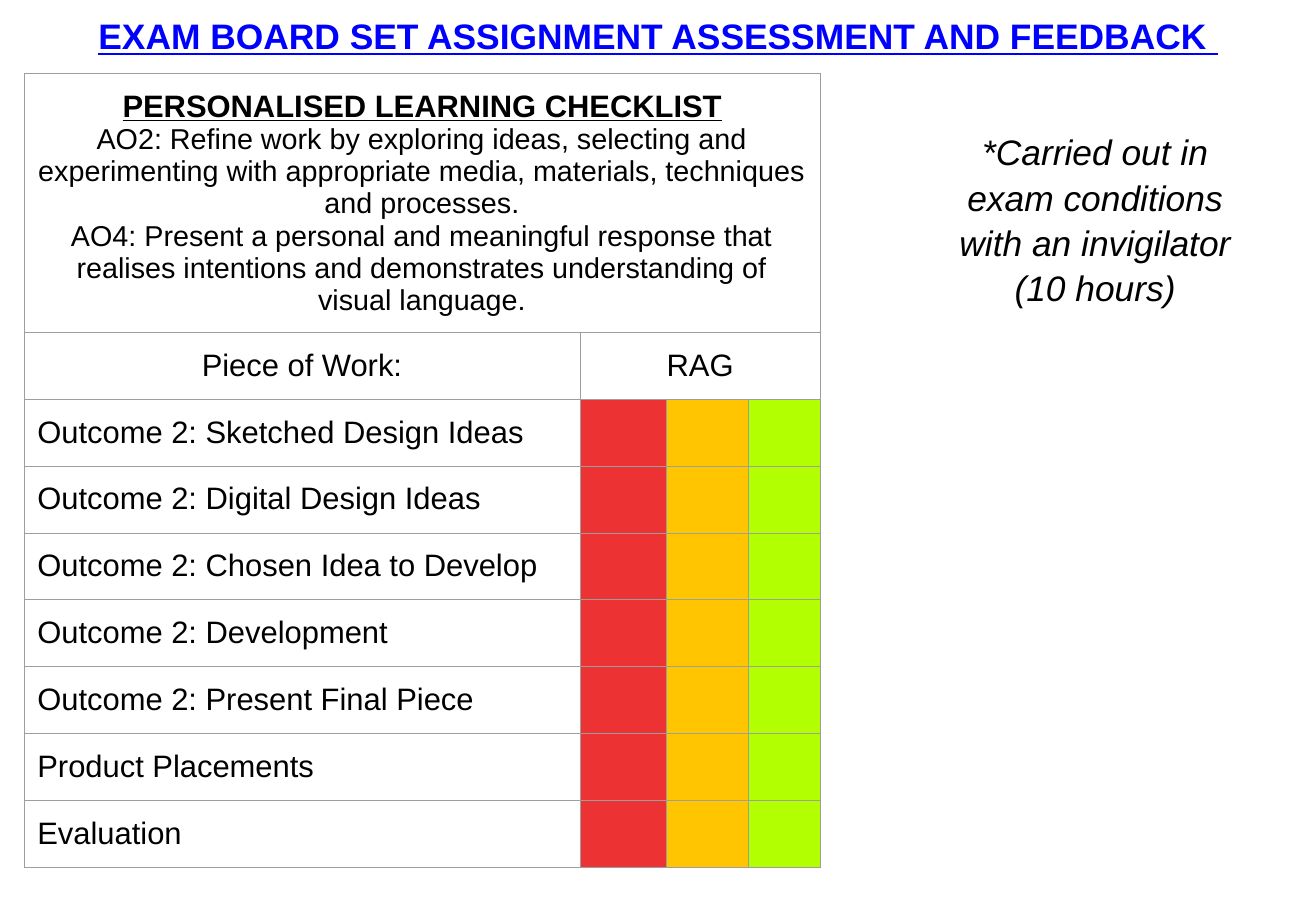
from lxml import etree
from pptx import Presentation
from pptx.dml.color import RGBColor
from pptx.enum.text import MSO_ANCHOR, MSO_AUTO_SIZE, PP_ALIGN
from pptx.oxml.ns import qn
from pptx.util import Inches, Pt

CENTER, LEFT = PP_ALIGN.CENTER, PP_ALIGN.LEFT
TOP, MIDDLE = MSO_ANCHOR.TOP, MSO_ANCHOR.MIDDLE
NO_AUTOFIT = MSO_AUTO_SIZE.NONE
TITLE_ONLY = 5

COLORS = {
    "title": "0000FF",
    "text": "000000",
    "border": "9E9E9E",
    "red": "EC3232",
    "amber": "FFC500",
    "green": "B1FF00",
}
RATINGS = ["red", "amber", "green"]
OBJECTIVES = [
    "PERSONALISED LEARNING CHECKLIST",
    "AO2: Refine work by exploring ideas, selecting and experimenting with "
    "appropriate media, materials, techniques and processes.",
    "AO4: Present a personal and meaningful response that realises intentions "
    "and demonstrates understanding of visual language.",
]
PIECES_OF_WORK = [
    "Outcome 2: Sketched Design Ideas",
    "Outcome 2: Digital Design Ideas",
    "Outcome 2: Chosen Idea to Develop",
    "Outcome 2: Development",
    "Outcome 2: Present Final Piece",
    "Product Placements",
    "Evaluation",
]
COLUMN_WIDTHS = [6.99, 1.08, 1.03, 0.91]
ROW_HEIGHTS = [3.25] + [0.84] * (1 + len(PIECES_OF_WORK))


def format_paragraph(paragraph, size, align=CENTER, color="text",
                     bold=False, underline=False, italic=False):
    paragraph.alignment = align
    for run in paragraph.runs:
        font = run.font
        font.name, font.size = "Arial", Pt(size)
        font.bold, font.underline, font.italic = bold, underline, italic
        font.color.rgb = RGBColor.from_string(COLORS[color])


def add_borders(cell):
    properties = cell._tc.get_or_add_tcPr()
    for index, side in enumerate(["a:lnL", "a:lnR", "a:lnT", "a:lnB"]):
        line = etree.Element(qn(side), w=str(Pt(0.75)))
        fill = etree.SubElement(line, qn("a:solidFill"))
        etree.SubElement(fill, qn("a:srgbClr"), val=COLORS["border"])
        properties.insert(index, line)


presentation = Presentation()
presentation.slide_width = Inches(16.54)
presentation.slide_height = Inches(11.42)
slide = presentation.slides.add_slide(presentation.slide_layouts[TITLE_ONLY])

# Checklist table
table = slide.shapes.add_table(
    len(ROW_HEIGHTS), len(COLUMN_WIDTHS), Inches(0.3), Inches(0.92),
    Inches(sum(COLUMN_WIDTHS)), Inches(sum(ROW_HEIGHTS))).table
table.first_row = table.horz_banding = False
for column, width in zip(table.columns, COLUMN_WIDTHS):
    column.width = Inches(width)
for row, height in zip(table.rows, ROW_HEIGHTS):
    row.height = Inches(height)
for cell in table.iter_cells():
    cell.margin_left = cell.margin_right = Inches(0.17)
    cell.margin_top = cell.margin_bottom = Inches(0.2)
    cell.fill.background()
    add_borders(cell)

# Objectives across the full width
objectives = table.cell(0, 0)
objectives.merge(table.cell(0, 3))
objectives.text_frame.text = "\n".join(OBJECTIVES)
heading, *details = objectives.text_frame.paragraphs
format_paragraph(heading, 28, bold=True, underline=True)
for paragraph in details:
    format_paragraph(paragraph, 26)

# Column headings
table.cell(1, 1).merge(table.cell(1, 3))
for column, label in enumerate(["Piece of Work:", "RAG"]):
    cell = table.cell(1, column)
    cell.text_frame.text = label
    format_paragraph(cell.text_frame.paragraphs[0], 28)

# Pieces of work with their red, amber and green cells
for row, piece in enumerate(PIECES_OF_WORK, start=2):
    cell = table.cell(row, 0)
    cell.text_frame.text = piece
    format_paragraph(cell.text_frame.paragraphs[0], 28, LEFT)
    for column, rating in enumerate(RATINGS, start=1):
        fill = table.cell(row, column).fill
        fill.solid()
        fill.fore_color.rgb = RGBColor.from_string(COLORS[rating])

# Title
title = slide.shapes.title
title.left, title.top = 0, 0
title.width, title.height = presentation.slide_width, Inches(0.9)
title.text_frame.text = "EXAM BOARD SET ASSIGNMENT ASSESSMENT AND FEEDBACK "
title.text_frame.auto_size = NO_AUTOFIT
title.text_frame.vertical_anchor = MIDDLE
format_paragraph(title.text_frame.paragraphs[0], 32, color="title",
                 bold=True, underline=True)

# Note on exam conditions
note = slide.shapes.add_textbox(Inches(11.66), Inches(1.5),
                                Inches(4.21), Inches(4.83))
frame = note.text_frame
frame.word_wrap = True
frame.vertical_anchor = TOP
frame.margin_left = frame.margin_right = Inches(0.1)
frame.margin_top = frame.margin_bottom = Inches(0.1)
frame.text = "*Carried out in exam conditions with an invigilator (10 hours)"
format_paragraph(frame.paragraphs[0], 32, italic=True)
frame.paragraphs[0].line_spacing = 1.07

presentation.save("out.pptx")
